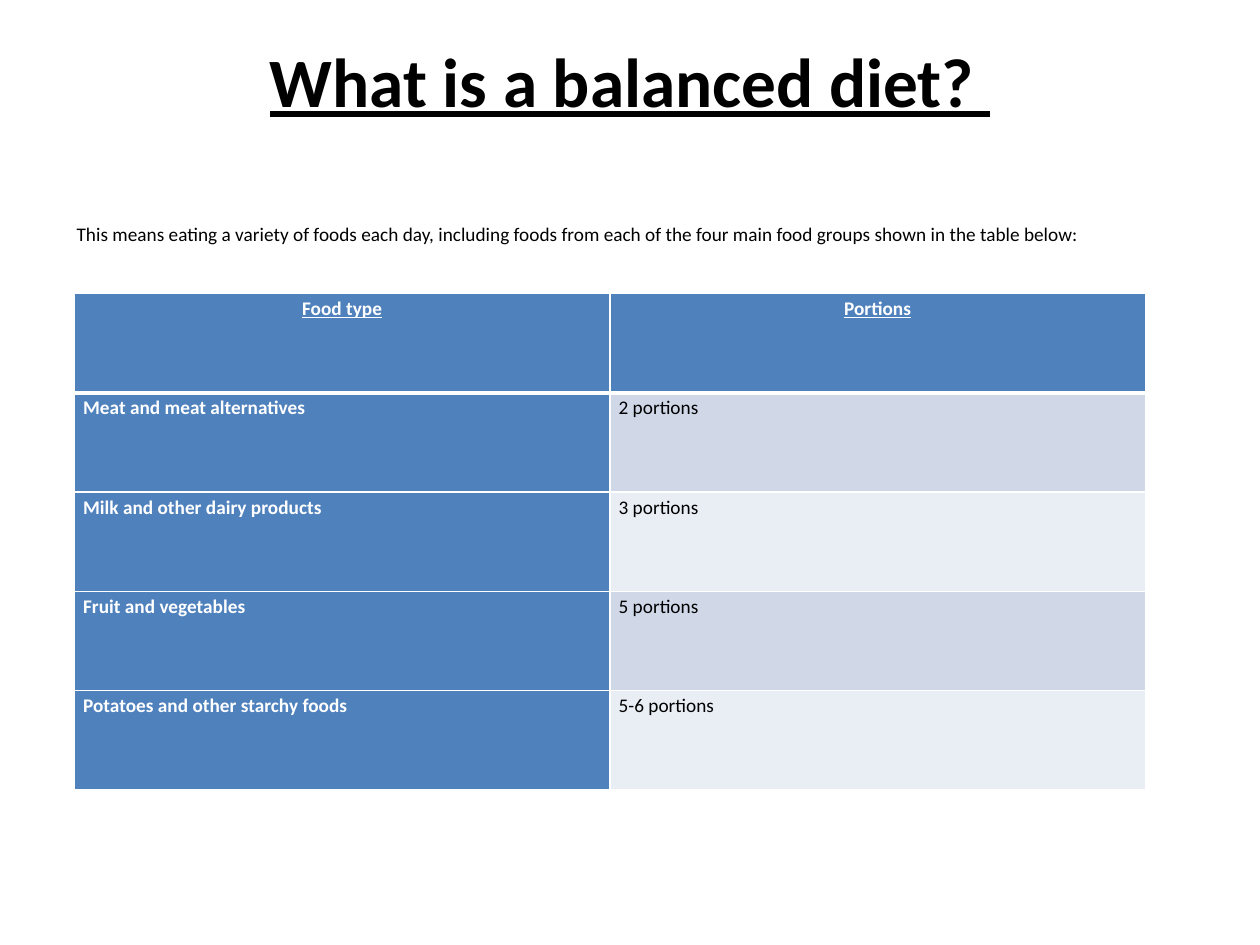
from dataclasses import dataclass

from lxml.etree import SubElement
from pptx import Presentation
from pptx.dml.color import RGBColor
from pptx.enum.text import MSO_ANCHOR, PP_ALIGN
from pptx.oxml.ns import qn
from pptx.util import Inches, Pt


@dataclass(frozen=True)
class Theme:
    font: str = "Calibri"
    black: str = "000000"
    white: str = "FFFFFF"
    blue: str = "4F81BD"
    bands: tuple = ("D0D8E8", "E9EDF4")
    title: float = 39.6
    body: float = 11
    thin: float = 1
    thick: float = 3


THEME = Theme()
WIDTH, HEIGHT = Inches(10), Inches(7.5)
ROWS = [
    ("Food type", "Portions"),
    ("Meat and meat alternatives", "2 portions"),
    ("Milk and other dairy products", "3 portions"),
    ("Fruit and vegetables", "5 portions"),
    ("Potatoes and other starchy foods", "5-6 portions"),
]


def style(frame, size, color, bold=False, line=False):
    """Format every run of a text frame."""
    for para in frame.paragraphs:
        for run in para.runs:
            font = run.font
            font.name, font.size = THEME.font, Pt(size)
            font.bold, font.underline = bold, line
            font.color.rgb = RGBColor.from_string(color)


def add_title(slide, text):
    title = slide.shapes.title
    title.left, title.top = Inches(0.5), Inches(0.3)
    title.width, title.height = Inches(9), Inches(1.25)
    frame = title.text_frame
    frame.text = text
    frame.vertical_anchor = MSO_ANCHOR.TOP
    frame.margin_top = 0
    frame.paragraphs[0].alignment = PP_ALIGN.CENTER
    style(frame, THEME.title, THEME.black, bold=True, line=True)


def add_intro(slide, text):
    box = slide.shapes.add_textbox(Inches(0.51), Inches(1.61), WIDTH, Inches(0.5))
    frame = box.text_frame
    frame.word_wrap = True
    frame.vertical_anchor = MSO_ANCHOR.MIDDLE
    frame.text = text
    style(frame, THEME.body, THEME.black)


def set_edges(cell, top, bottom):
    """Draw white cell borders, placed before the fill as the schema asks."""
    props = cell._tc.get_or_add_tcPr()
    sides = {"lnL": THEME.thin, "lnR": THEME.thin, "lnT": top, "lnB": bottom}
    for spot, (side, width) in enumerate(sides.items()):
        edge = SubElement(props, qn(f"a:{side}"), w=str(Pt(width)))
        fill = SubElement(edge, qn("a:solidFill"))
        SubElement(fill, qn("a:srgbClr"), val=THEME.white)
        props.insert(spot, edge)


def fill_cell(cell, text, row, col):
    head = row == 0
    label = head or col == 0
    cell.margin_left = cell.margin_right = Inches(0.07)
    cell.margin_top = cell.margin_bottom = 0
    cell.fill.solid()
    shade = THEME.blue if label else THEME.bands[(row - 1) % 2]
    cell.fill.fore_color.rgb = RGBColor.from_string(shade)

    frame = cell.text_frame
    frame.text = text
    para = frame.paragraphs[0]
    para.line_spacing = 1.15
    para.alignment = PP_ALIGN.CENTER if head else PP_ALIGN.LEFT
    color = THEME.white if label else THEME.black
    style(frame, THEME.body, color, bold=label, line=head)

    # The heavy rule runs between the header and the first food
    set_edges(cell, THEME.thick if row == 1 else THEME.thin,
              THEME.thick if head else THEME.thin)


def add_foods(slide, rows):
    frame = slide.shapes.add_table(len(rows), len(rows[0]), Inches(0.59),
                                   Inches(2.33), Inches(8.5), Inches(3.94))
    for row, texts in enumerate(rows):
        for col, text in enumerate(texts):
            fill_cell(frame.table.cell(row, col), text, row, col)


def main():
    deck = Presentation()
    deck.slide_width, deck.slide_height = WIDTH, HEIGHT
    slide = deck.slides.add_slide(deck.slide_layouts[5])
    add_title(slide, "What is a balanced diet? ")
    add_intro(slide, "This means eating a variety of foods each day, including "
              "foods from each of the four main food groups shown in the table below:")
    add_foods(slide, ROWS)
    deck.save("out.pptx")


if __name__ == "__main__":
    main()
